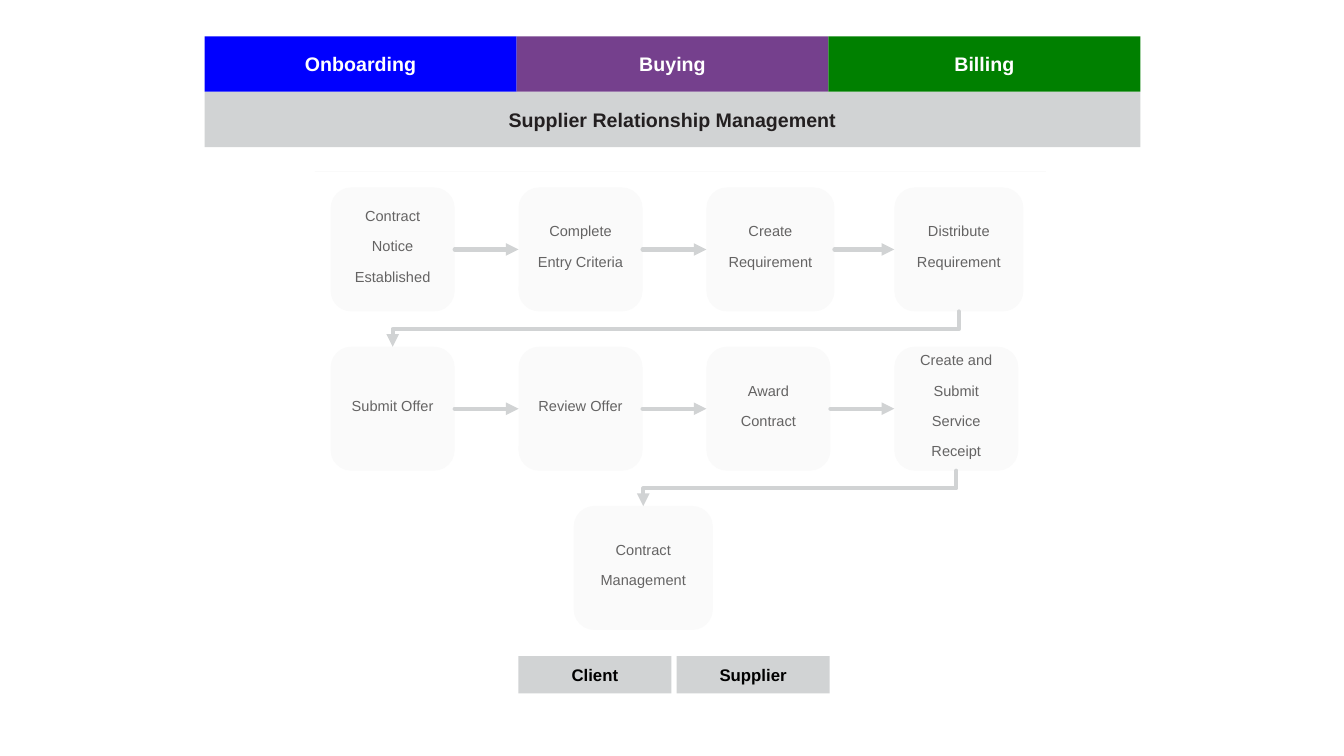
import pptx
import pptx.util
import pptx.dml.color
import pptx.enum.shapes
import pptx.enum.text
import pptx.oxml
import pptx.oxml.ns
from dataclasses import dataclass

Inches, Pt = pptx.util.Inches, pptx.util.Pt
SHAPE = pptx.enum.shapes.MSO_SHAPE
CONNECTOR = pptx.enum.shapes.MSO_CONNECTOR

# Content
BANNER = "Supplier Relationship Management"
PHASES = [("Onboarding", "0000FF"), ("Buying", "75408D"), ("Billing", "008000")]
# Each step: text, box width
STEP_ROWS = [
    [("Contract Notice Established", 1.23), ("Complete Entry Criteria", 1.23),
     ("Create Requirement", 1.27), ("Distribute Requirement", 1.28)],
    [("Submit Offer", 1.23), ("Review Offer", 1.23),
     ("Award Contract", 1.23), ("Create and Submit Service Receipt", 1.23)],
    [("Contract Management", 1.38)],
]
ROW_LEFTS = [3.28, 3.28, 5.69]
PARTIES = ["Client", "Supplier"]


@dataclass(frozen=True)
class Theme:
    font: str = "Arial"
    phase_text: str = "FFFFFF"
    banner_text: str = "231F20"
    step_text: str = "646363"
    party_text: str = "000000"
    bar: str = "D1D3D4"
    step: str = "FAFAFA"
    heading_size: int = 14
    step_size: int = 18
    party_size: int = 12


THEME = Theme()

# Layout in inches
BAND_LEFT, BAND_TOP, BAND_WIDTH, BAND_HEIGHT = 2.03, 0.36, 9.28, 0.55
STEP_TOP, STEP_HEIGHT, ROW_PITCH = 1.86, 1.23, 1.58
COLUMN_PITCH = (8.87 - 3.28) / 3
PARTY_LEFT, PARTY_TOP, PARTY_PITCH = 5.14, 6.51, 1.57
TOP, LEFT, BOTTOM, RIGHT = range(4)  # connection sites of a box


def rgb(value):
    return pptx.dml.color.RGBColor.from_string(value)


def write(shape, text, *, size, color, bold=False, baseline=None):
    frame = shape.text_frame
    frame.word_wrap = True
    frame.auto_size = pptx.enum.text.MSO_AUTO_SIZE.NONE
    frame.vertical_anchor = pptx.enum.text.MSO_ANCHOR.MIDDLE
    paragraph = frame.paragraphs[0]
    paragraph.alignment = pptx.enum.text.PP_ALIGN.CENTER
    run = paragraph.add_run()
    run.text = text
    run.font.name, run.font.size, run.font.bold = THEME.font, Pt(size), bold
    run.font.color.rgb = rgb(color)
    if baseline:
        run.font._element.set("baseline", str(baseline * 1000))


def add_box(slide, kind, left, top, width, height, fill):
    box = slide.shapes.add_shape(
        kind, Inches(left), Inches(top), Inches(width), Inches(height))
    box.shadow.inherit = False
    box.fill.solid()
    box.fill.fore_color.rgb = rgb(fill)
    box.line.fill.background()
    return box


def add_line(slide, kind, color, width, ends=(0, 0, 0, 0)):
    line = slide.shapes.add_connector(kind, *map(Inches, ends))
    line.line.color.rgb = rgb(color)
    line.line.width = Pt(width)
    line._element.spPr.append(pptx.oxml.parse_xml(
        f"<a:effectLst {pptx.oxml.ns.nsdecls('a')}/>"))
    return line


def add_arrow(slide, kind, start, start_site, end, end_site):
    arrow = add_line(slide, kind, THEME.bar, 3)
    arrow.begin_connect(start, start_site)
    arrow.end_connect(end, end_site)
    outline = arrow.line._get_or_add_ln()
    outline.set("cap", "rnd")
    outline.append(pptx.oxml.parse_xml(
        f"<a:tailEnd {pptx.oxml.ns.nsdecls('a')} type='triangle'/>"))
    return arrow


def add_row_return(slide, last, first):
    """Elbow from the bottom of one row's last step to the top of the next row."""
    elbow = add_arrow(slide, CONNECTOR.ELBOW, last, BOTTOM, first, TOP)
    start_x, end_x = last.left + last.width // 2, first.left + first.width // 2
    start_y, end_y = last.top + last.height, first.top
    drop, run = end_y - start_y, start_x - end_x
    # A quarter turn makes the elbow leave and arrive vertically
    frame = elbow._element.spPr.find(pptx.oxml.ns.qn("a:xfrm"))
    for flip in ("flipH", "flipV"):
        frame.attrib.pop(flip, None)
    frame.set("rot", "5400000")
    elbow.left = (start_x + end_x - drop) // 2
    elbow.top = (start_y + end_y - run) // 2
    elbow.width, elbow.height = drop, run


def main():
    deck = pptx.Presentation()
    deck.slide_width, deck.slide_height = Inches(13.33), Inches(7.5)
    slide = deck.slides.add_slide(deck.slide_layouts[5])

    # Phases
    phase_width = BAND_WIDTH / len(PHASES)
    for i, (phase, color) in enumerate(PHASES):
        box = add_box(slide, SHAPE.RECTANGLE, BAND_LEFT + i * phase_width,
                      BAND_TOP, phase_width, BAND_HEIGHT, color)
        write(box, phase, size=THEME.heading_size, color=THEME.phase_text, bold=True)

    # Banner and rule
    banner = slide.shapes.title
    banner.left, banner.top = Inches(BAND_LEFT), Inches(BAND_TOP + BAND_HEIGHT)
    banner.width, banner.height = Inches(BAND_WIDTH), Inches(BAND_HEIGHT)
    banner.fill.solid()
    banner.fill.fore_color.rgb = rgb(THEME.bar)
    write(banner, BANNER, size=THEME.heading_size, color=THEME.banner_text, bold=True)
    add_line(slide, CONNECTOR.STRAIGHT, THEME.step, 0.5, (3.12, 1.7, 10.37, 1.7))

    # Steps
    rows = []
    for r, (steps, row_left) in enumerate(zip(STEP_ROWS, ROW_LEFTS)):
        row = []
        for c, (step, width) in enumerate(steps):
            box = add_box(slide, SHAPE.ROUNDED_RECTANGLE, row_left + c * COLUMN_PITCH,
                          STEP_TOP + r * ROW_PITCH, width, STEP_HEIGHT, THEME.step)
            write(box, step, size=THEME.step_size, color=THEME.step_text, baseline=30)
            row.append(box)
        rows.append(row)

    # Arrows along each row, then between rows
    for row in rows:
        for start, end in zip(row, row[1:]):
            add_arrow(slide, CONNECTOR.STRAIGHT, start, RIGHT, end, LEFT)
    for row, next_row in zip(rows, rows[1:]):
        add_row_return(slide, row[-1], next_row[0])

    # Parties
    for i, party in enumerate(PARTIES):
        box = add_box(slide, SHAPE.RECTANGLE, PARTY_LEFT + i * PARTY_PITCH,
                      PARTY_TOP, 1.52, 0.37, THEME.bar)
        write(box, party, size=THEME.party_size, color=THEME.party_text, bold=True)

    deck.save("out.pptx")


if __name__ == "__main__":
    main()
